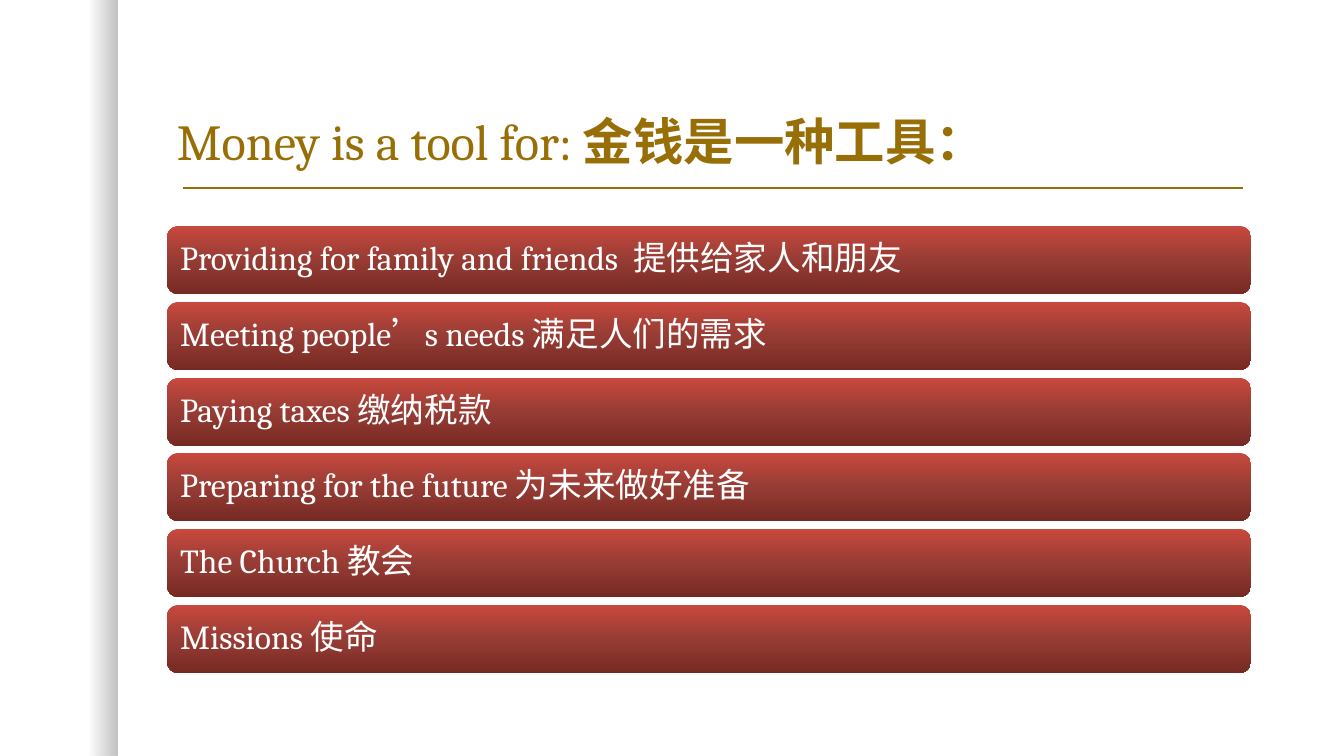
"""Builds the slide listing what money is a tool for."""
from pptx import Presentation
from pptx.dml.color import RGBColor
from pptx.enum.shapes import MSO_CONNECTOR, MSO_SHAPE
from pptx.enum.text import MSO_ANCHOR, PP_ALIGN
from pptx.oxml import parse_xml
from pptx.oxml.ns import nsdecls
from pptx.util import Pt

PX = 914400 / 100.8
RECT, ROUND_RECT = MSO_SHAPE.RECTANGLE, MSO_SHAPE.ROUNDED_RECTANGLE
STRAIGHT = MSO_CONNECTOR.STRAIGHT
LEFT = PP_ALIGN.LEFT
BOTTOM, MIDDLE = MSO_ANCHOR.BOTTOM, MSO_ANCHOR.MIDDLE
GOLD = RGBColor(0x98, 0x6F, 0x07)
WHITE = RGBColor(0xFF, 0xFF, 0xFF)
BLACK = RGBColor(0x00, 0x00, 0x00)
RED_LIGHT = RGBColor(0xC8, 0x48, 0x3E)
RED_MID = RGBColor(0x96, 0x3C, 0x34)
RED_DARK = RGBColor(0x76, 0x29, 0x23)

EDGE_STOPS = [(75, BLACK, 0), (100, BLACK, 25)]
BAR_STOPS = [(0, RED_LIGHT, 100), (50, RED_MID, 100), (100, RED_DARK, 100)]
BAR_LEFT, BAR_WIDTH, BAR_HEIGHT = 167, 1084, 68
FIRST_TOP, LAST_TOP = 226, 605
USES = [
    "Providing for family and friends  提供给家人和朋友",
    "Meeting people’s needs 满足人们的需求",
    "Paying taxes 缴纳税款",
    "Preparing for the future 为未来做好准备",
    "The Church 教会",
    "Missions 使命",
]


def px(*lengths):
    return [round(n * PX) for n in lengths]


def add_gradient_shape(kind, box, stops, angle):
    sp = s.shapes.add_shape(kind, *px(*box))
    sp.shadow.inherit = False
    sp.line.fill.background()
    gs = "".join(
        f'<a:gs pos="{pos * 1000}"><a:srgbClr val="{color}">'
        f'<a:alpha val="{alpha * 1000}"/></a:srgbClr></a:gs>'
        for pos, color, alpha in stops)
    sp._element.spPr.insert(2, parse_xml(
        f'<a:gradFill {nsdecls("a")} rotWithShape="1"><a:gsLst>{gs}</a:gsLst>'
        f'<a:lin ang="{angle * 60000}" scaled="0"/></a:gradFill>'))
    return sp


prs = Presentation()
prs.slide_width, prs.slide_height = px(1344, 756)
s = prs.slides.add_slide(prs.slide_layouts[6])

add_gradient_shape(RECT, (0, 0, 117, 756), EDGE_STOPS, 0)

rule = s.shapes.add_connector(STRAIGHT, *px(183, 188, 1243, 188))
rule.line.color.rgb = GOLD
rule.line.width = Pt(1)
rule._element.spPr.append(parse_xml(f'<a:effectLst {nsdecls("a")}/>'))

title = s.shapes.add_textbox(*px(BAR_LEFT, 42, BAR_WIDTH, 134))
tf = title.text_frame
tf.word_wrap = True
tf.vertical_anchor = BOTTOM
p = tf.paragraphs[0]
p.line_spacing = 0.9
for text, bold in [("Money is a tool for: ", False), ("金钱是一种工具：", True)]:
    r = p.add_run()
    r.text = text
    for name, value in {"name": "Cambria", "size": Pt(36), "bold": bold}.items():
        setattr(r.font, name, value)
    r.font.color.rgb = GOLD

pitch = (LAST_TOP - FIRST_TOP) / (len(USES) - 1)
for i, use in enumerate(USES):
    box = (BAR_LEFT, round(FIRST_TOP + i * pitch), BAR_WIDTH, BAR_HEIGHT)
    sp = add_gradient_shape(ROUND_RECT, box, BAR_STOPS, 90)
    tf = sp.text_frame
    tf.word_wrap = True
    tf.vertical_anchor = MIDDLE
    p = tf.paragraphs[0]
    p.alignment = LEFT
    p.line_spacing = 0.9
    r = p.add_run()
    r.text = use
    for name, value in {"name": "Cambria", "size": Pt(24)}.items():
        setattr(r.font, name, value)
    r.font.color.rgb = WHITE

prs.save("out.pptx")
